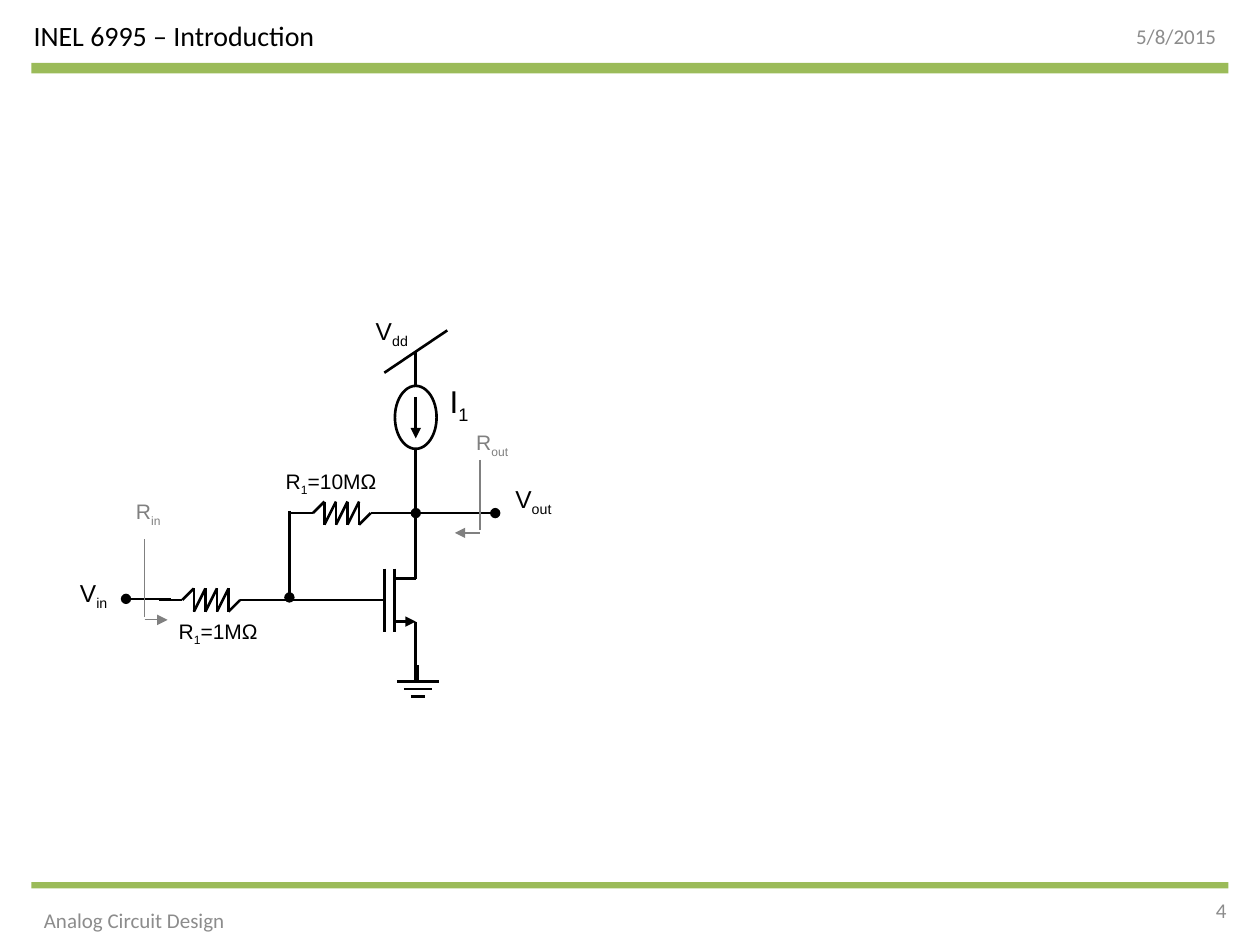
from itertools import pairwise

from lxml import etree
from pptx import Presentation
from pptx.dml.color import RGBColor
from pptx.enum.shapes import MSO_CONNECTOR, MSO_SHAPE
from pptx.enum.text import MSO_ANCHOR, MSO_AUTO_SIZE, PP_ALIGN
from pptx.oxml.ns import qn
from pptx.util import Pt

STRAIGHT = MSO_CONNECTOR.STRAIGHT
RECT, OVAL = MSO_SHAPE.RECTANGLE, MSO_SHAPE.OVAL
LEFT, RIGHT = PP_ALIGN.LEFT, PP_ALIGN.RIGHT
MIDDLE = MSO_ANCHOR.MIDDLE
GROW = MSO_AUTO_SIZE.SHAPE_TO_FIT_TEXT
COLORS = {"black": "000000", "gray": "808080", "footer": "8C8C8C", "bar": "9BBB59"}
MAIN_X = 237.6
OUT_Y = 293.2
GATE_Y = 342.9


def rgb(name):
    return RGBColor.from_string(COLORS[name])


def set_font(font, name, size, color):
    font.name = name
    font.size = Pt(size)
    font.color.rgb = rgb(color)


def add_title(s, text):
    sp = s.shapes.title
    sp.left, sp.top, sp.width, sp.height = Pt(12), Pt(6), Pt(240), Pt(28.8)
    tf = sp.text_frame
    tf.text = text
    tf.vertical_anchor = MIDDLE
    p = tf.paragraphs[0]
    p.alignment = LEFT
    set_font(p.font, "Calibri", 16, "black")


def add_bar(s, top, height):
    sp = s.shapes.add_shape(RECT, Pt(18), Pt(top), Pt(684), Pt(height))
    sp.shadow.inherit = False
    sp.fill.solid()
    sp.fill.fore_color.rgb = rgb("bar")
    sp.line.fill.background()


def add_note(s, text, left, top, width, align):
    tf = s.shapes.add_textbox(Pt(left), Pt(top), Pt(width), Pt(28.8)).text_frame
    tf.word_wrap = True
    tf.vertical_anchor = MIDDLE
    p = tf.paragraphs[0]
    p.text = text
    p.alignment = align
    set_font(p.font, "Calibri", 12, "footer")


def add_label(s, left, top, width, height, size, base, sub, rest="", color="black"):
    tf = s.shapes.add_textbox(Pt(left), Pt(top), Pt(width), Pt(height)).text_frame
    tf.word_wrap = False
    tf.auto_size = GROW
    p = tf.paragraphs[0]
    set_font(p.font, "Arial", size, color)
    for text in filter(None, (base, sub, rest)):
        r = p.add_run()
        r.text = text
        if text == sub:
            r._r.get_or_add_rPr().set("baseline", "-25000")


def add_wire(s, start, end, tail=None, color="black", weight=1.5):
    c = s.shapes.add_connector(STRAIGHT, *map(Pt, (*start, *end)))
    c.line.width = Pt(weight)
    c.line.color.rgb = rgb(color)
    if tail:
        etree.SubElement(c.line._get_or_add_ln(), qn("a:tailEnd"), type=tail)
    etree.SubElement(c._element.spPr, qn("a:effectLst"))


def add_resistor(s, x, y):
    lead, step = 13.4, 6.6
    points = [(x, y), (x + lead, y)]
    for i in range(1, 5):
        points += [(x + lead + i * step, y - step), (x + lead + i * step, y + step)]
    end = x + lead + 5 * step
    points += [(end, y), (end + lead, y)]
    for start, stop in pairwise(points):
        add_wire(s, start, stop)


def add_transistor(s):
    channel, gate = 225.6, 219.6
    drain, source = GATE_Y - 12.3, GATE_Y + 12.3
    add_wire(s, (MAIN_X, OUT_Y), (MAIN_X, drain))
    add_wire(s, (MAIN_X, source), (MAIN_X, 389.5))
    add_wire(s, (MAIN_X, drain), (channel, drain))
    add_wire(s, (channel, source), (MAIN_X, source), "triangle")
    for x in (channel, gate):
        add_wire(s, (x, GATE_Y - 18), (x, GATE_Y + 18))
    add_wire(s, (148.3, GATE_Y), (gate, GATE_Y))


def add_ground(s):
    x, y = 238.8, 389.5
    add_wire(s, (x, y - 9.4), (x, y))
    for i in range(3):
        half = 12 - 4 * i
        add_wire(s, (x - half, y + 4.3 * i), (x + half, y + 4.3 * i))


def add_supply(s):
    add_wire(s, (255.6, 188.8), (219.6, 213))
    add_wire(s, (MAIN_X, 201), (MAIN_X, 220.5))
    sp = s.shapes.add_shape(OVAL, Pt(225.7), Pt(220.5), Pt(23.8), Pt(36))
    sp.shadow.inherit = False
    sp.fill.background()
    sp.line.color.rgb = rgb("black")
    sp.line.width = Pt(1.5)
    add_wire(s, (MAIN_X, 226.8), (MAIN_X, 250.5), "triangle")
    add_wire(s, (MAIN_X, 256.5), (MAIN_X, OUT_Y))


def add_probe(s, x, top, bottom, tip):
    add_wire(s, (x, top), (x, bottom - 1.5), color="gray", weight=0.75)
    add_wire(s, (x, bottom), (tip, bottom), "triangle", "gray", 0.75)


def main():
    prs = Presentation()
    prs.slide_width, prs.slide_height = Pt(720), Pt(540)
    s = prs.slides.add_slide(prs.slide_layouts[5])

    add_title(s, "INEL 6995 – Introduction")
    add_bar(s, 36, 6)
    add_bar(s, 504, 3.6)
    add_note(s, "5/8/2015", 534, 6, 168, RIGHT)
    add_note(s, "Analog Circuit Design", 18, 511.2, 126, LEFT)
    add_note(s, "4", 540, 505.5, 168, RIGHT)

    add_supply(s)
    add_transistor(s)
    add_ground(s)
    add_resistor(s, 165.4, OUT_Y)
    add_resistor(s, 90.8, GATE_Y)
    add_wire(s, (98, 342.2), (72, 342.2), "oval")
    add_wire(s, (165.4, 292), (165.4, 341.4), "oval")
    add_wire(s, (223.2, OUT_Y), (MAIN_X, OUT_Y), "oval")
    add_wire(s, (MAIN_X, OUT_Y), (283, OUT_Y), "oval")
    add_probe(s, 274.3, 262.8, 304.5, 259.9)
    add_probe(s, 82.6, 308.2, 354.2, 95.8)

    add_label(s, 38.6, 326.7, 31, 24.5, 14, "V", "in")
    add_label(s, 207.6, 177, 34.6, 24.5, 14, "V", "dd")
    add_label(s, 287.4, 273, 36.7, 24.5, 14, "V", "out")
    add_label(s, 249.8, 214.6, 26, 28.8, 18, "I", "1")
    add_label(s, 70.6, 281.5, 29.5, 21.6, 12, "R", "in", color="gray")
    add_label(s, 265, 242.2, 34.6, 21.6, 12, "R", "out", color="gray")
    add_label(s, 95, 350, 60.5, 21.6, 12, "R", "1", "=1MΩ")
    add_label(s, 156.2, 264.2, 67.7, 21.6, 12, "R", "1", "=10MΩ")

    prs.save("out.pptx")


if __name__ == "__main__":
    main()
